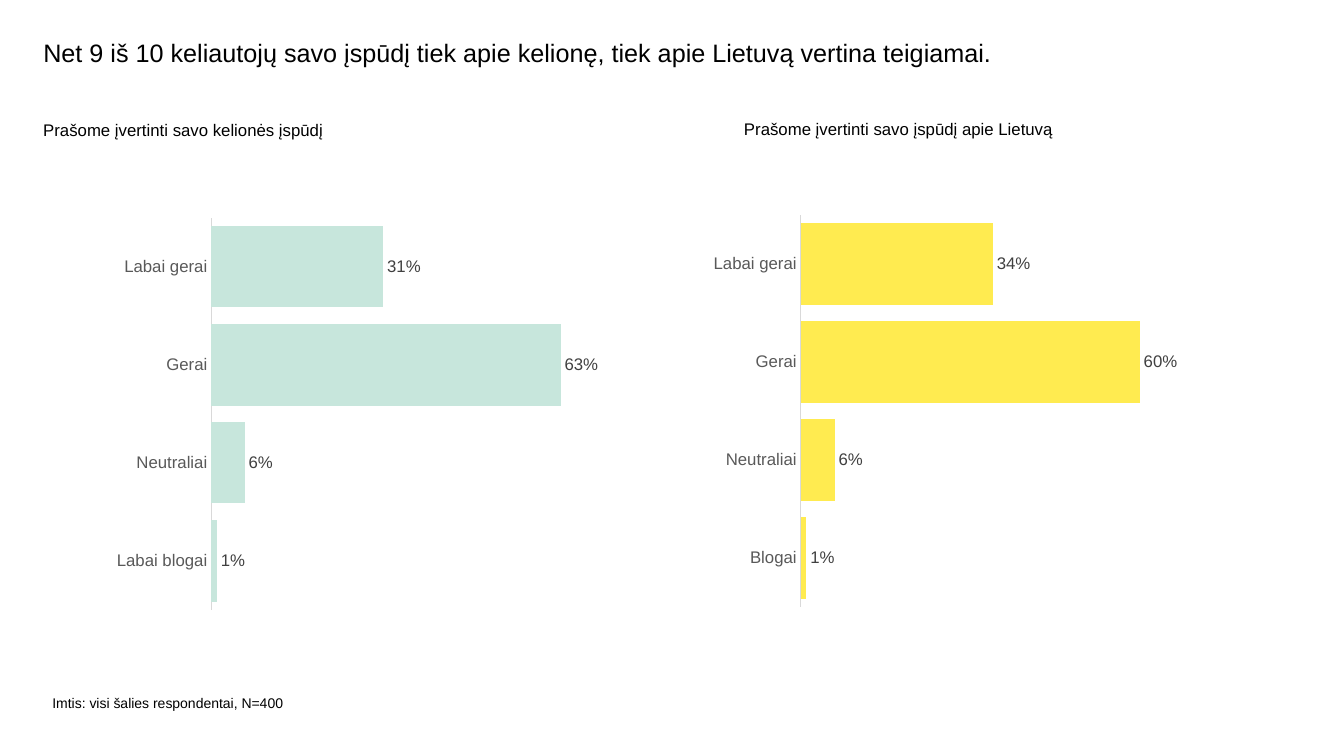
from pptx import Presentation
from pptx import util as u
from pptx.chart.data import CategoryChartData
from pptx.dml.color import RGBColor
from pptx.enum import chart as charts, text


def style_font(font, size, color):
    font.name = "Arial"
    font.size = u.Pt(size)
    font.bold = False
    font.color.rgb = RGBColor.from_string(color)


def write(box, left, top, width, height, words, size):
    box.left, box.top = u.Cm(left), u.Cm(top)
    box.width, box.height = u.Cm(width), u.Cm(height)
    frame = box.text_frame
    frame.word_wrap = True
    frame.auto_size = text.MSO_AUTO_SIZE.NONE
    frame.vertical_anchor = text.MSO_ANCHOR.TOP
    frame.margin_left = frame.margin_right = 0
    frame.margin_top = frame.margin_bottom = 0
    para = frame.paragraphs[0]
    para.alignment = text.PP_ALIGN.LEFT
    span = para.add_run()
    span.text = words
    style_font(span.font, size, "000000")
    return para


deck = Presentation()
deck.slide_width, deck.slide_height = u.Cm(33.87), u.Cm(19.05)
page = deck.slides.add_slide(deck.slide_layouts[5])

title = write(
    page.shapes.title, 1.09, 1.02, 28.58, 1.52,
    "Net 9 iš 10 keliautojų savo įspūdį tiek apie kelionę, tiek apie Lietuvą vertina teigiamai.", 18,
)
title.line_spacing = 0.9

labels = [
    (1.32, 17.5, 9.8, 1.12, "Imtis: visi šalies respondentai, N=400", 10),
    (1.09, 3.02, 14, 1.78, "Prašome įvertinti savo kelionės įspūdį", 12),
    (18.75, 3, 14, 1.78, "Prašome įvertinti savo įspūdį apie Lietuvą", 12),
]
for label in labels:
    write(page.shapes.add_textbox(0, 0, 0, 0), *label)

ratings = [
    (2.69, 5.28, "C7E6DC", "Labai blogai", (0.31, 0.63, 0.06, 0.01)),
    (17.73, 5.21, "FFEB50", "Blogai", (0.34, 0.6, 0.06, 0.01)),
]
for left, top, color, worst, shares in ratings:
    data = CategoryChartData(number_format="0%")
    data.categories = ["Labai gerai", "Gerai", "Neutraliai", worst]
    data.add_series("Series 1", shares)
    chart = page.shapes.add_chart(
        charts.XL_CHART_TYPE.BAR_CLUSTERED,
        u.Cm(left), u.Cm(top), u.Cm(12.67), u.Cm(10.29), data,
    ).chart
    chart.has_legend = False
    chart.has_title = False
    style_font(chart.font, 10, "000000")

    answers = chart.category_axis
    answers.reverse_order = True
    answers.has_major_gridlines = False
    answers.major_tick_mark = charts.XL_TICK_MARK.NONE
    answers.minor_tick_mark = charts.XL_TICK_MARK.NONE
    answers.format.line.color.rgb = RGBColor.from_string("D9D9D9")
    answers.format.line.width = u.Pt(0.75)
    style_font(answers.tick_labels.font, 12, "595959")

    scale = chart.value_axis
    scale.visible = False
    scale.has_major_gridlines = False
    scale.minimum_scale, scale.maximum_scale = 0, 0.7

    plot = chart.plots[0]
    plot.gap_width = 20
    plot.vary_by_categories = False
    bars = plot.series[0]
    bars.format.fill.solid()
    bars.format.fill.fore_color.rgb = RGBColor.from_string(color)
    values = bars.data_labels
    values.show_value = True
    values.number_format = "0%"
    values.number_format_is_linked = False
    values.position = charts.XL_LABEL_POSITION.OUTSIDE_END
    style_font(values.font, 12, "404040")

deck.save("out.pptx")
